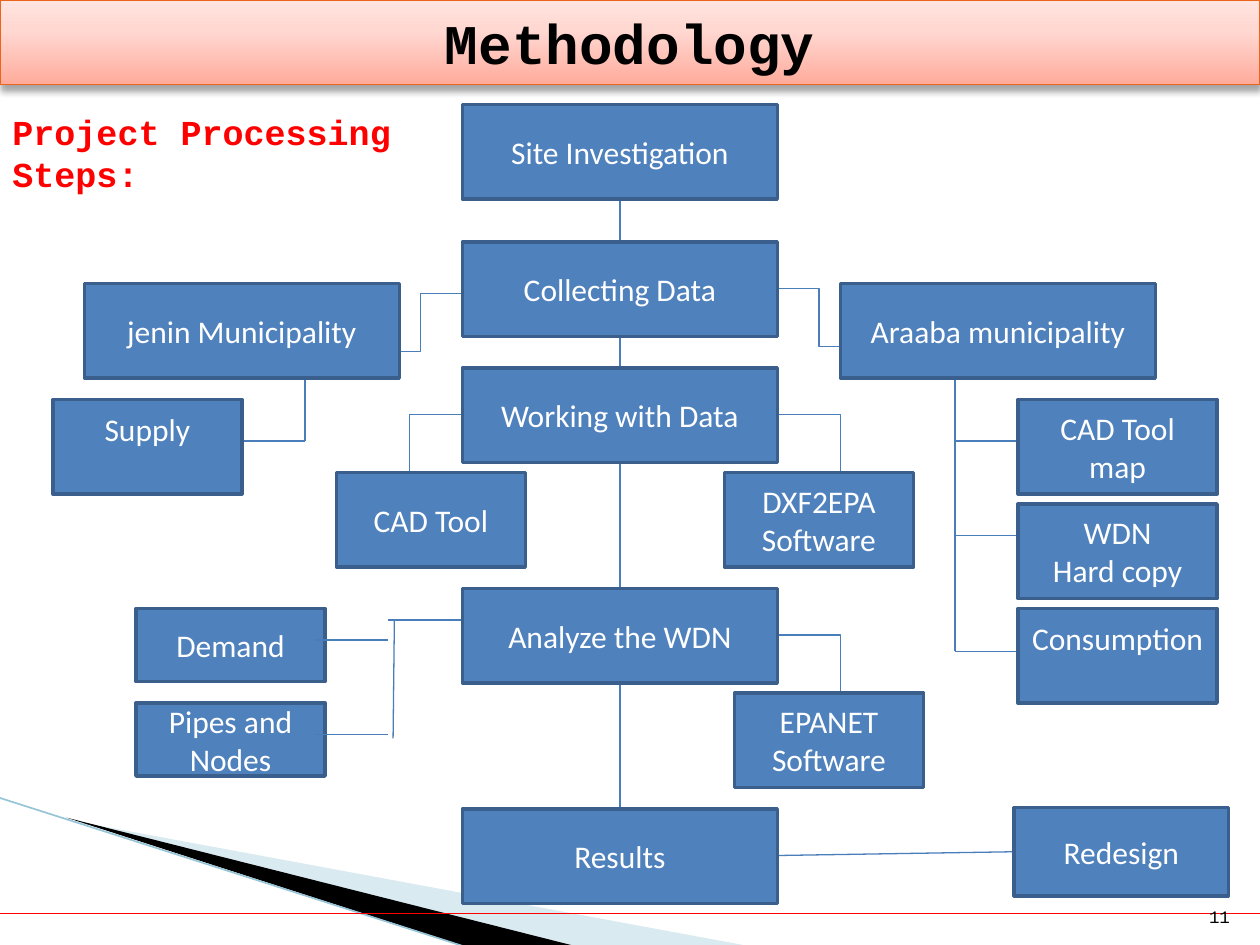
from typing import NamedTuple

from lxml.etree import SubElement
from pptx import Presentation
from pptx.dml.color import RGBColor
from pptx.enum.shapes import MSO_CONNECTOR, MSO_SHAPE
from pptx.enum.text import MSO_ANCHOR, PP_ALIGN
from pptx.oxml import parse_xml
from pptx.oxml.ns import nsdecls, qn
from pptx.util import Inches, Pt

BOX_FILL = RGBColor(0x4F, 0x81, 0xBD)
BOX_LINE = RGBColor(0x3A, 0x5F, 0x8C)
LINK_BLUE = RGBColor(0x4A, 0x7E, 0xBB)
EDGE_BLUE = RGBColor(0x97, 0xC5, 0xD8)
WEDGE_BLUE = RGBColor(0xA0, 0xCB, 0xDC)
TITLE_LINE = RGBColor(0xEB, 0x64, 0x1B)
RED = RGBColor(0xFF, 0x00, 0x00)
BLACK = RGBColor(0x00, 0x00, 0x00)
WHITE = RGBColor(0xFF, 0xFF, 0xFF)
TITLE_STOPS = ((0, "FFAC9C"), (65, "FFD8D2"), (100, "FFE4DF"))

MAIN_LEFT, MAIN_WIDTH, BOX_HEIGHT = 3.67, 2.5, 0.75
MAIN_CENTER, MAIN_RIGHT = MAIN_LEFT + MAIN_WIDTH / 2, MAIN_LEFT + MAIN_WIDTH
DATA_TRUNK = 7.58


class Box(NamedTuple):
    text: str
    left: float
    top: float
    width: float = 1.5
    height: float = BOX_HEIGHT
    at_top: bool = False


class Link(NamedTuple):
    start: tuple[float, float]
    end: tuple[float, float]
    preset: str = "line"


MAIN_STEPS = [
    Box(text, MAIN_LEFT, top, MAIN_WIDTH)
    for text, top in (
        ("Site Investigation", 0.83),
        ("Collecting Data", 1.92),
        ("Working with Data", 2.92),
        ("Analyze the WDN", 4.67),
        ("Results", 6.42),
    )
]
SIDE_BOXES = [
    Box("jenin Municipality", 0.67, 2.25, MAIN_WIDTH),
    Box("Araaba municipality", 6.67, 2.25, MAIN_WIDTH),
    Box("Supply", 0.42, 3.17, at_top=True),
    Box("CAD Tool map", 8.08, 3.17, 1.58),
    Box("WDN\nHard copy", 8.08, 4, 1.58),
    Box("Consumption", 8.08, 4.83, 1.58, at_top=True),
    Box("CAD Tool", 2.67, 3.75),
    Box("DXF2EPA\nSoftware", 5.75, 3.75),
    Box("EPANET\nSoftware", 5.83, 5.5),
    Box("Demand", 1.08, 4.83, height=0.58),
    Box("Pipes and Nodes", 1.08, 5.58, height=0.58),
    Box("Redesign", 8.05, 6.41, 1.7, 0.7),
]
STEP_LINKS = [
    Link((MAIN_CENTER, upper.top + BOX_HEIGHT), (MAIN_CENTER, lower.top))
    for upper, lower in zip(MAIN_STEPS, MAIN_STEPS[1:])
]
BRANCH_LINKS = [
    Link((MAIN_RIGHT, 2.29), (6.83, 2.75), "bentConnector3"),
    Link((3, 2.79), (MAIN_LEFT, 2.33), "bentConnector3"),
    Link((MAIN_LEFT, 3.29), (3.25, 4), "bentConnector2"),
    Link((MAIN_RIGHT, 3.29), (6.67, 4), "bentConnector2"),
    Link((MAIN_RIGHT, 5.04), (6.67, 5.75), "bentConnector2"),
    Link((2.42, 3), (2.42, 3.5)),
    Link((1.92, 3.5), (2.42, 3.5)),
    Link((DATA_TRUNK, 3), (DATA_TRUNK, 5.17)),
    *(Link((DATA_TRUNK, y), (8.08, y)) for y in (3.5, 4.25, 5.17)),
    Link((MAIN_LEFT, 4.92), (3.08, 4.92)),
    Link((3.13, 4.92), (3.12, 5.86)),
    Link((MAIN_RIGHT, 6.79), (8.05, 6.76)),
]
INPUT_LINKS = [Link((3.08, y), (2.5, y)) for y in (5.08, 5.83)]


def style_text(text_frame, size: float, font: str, color: RGBColor,
               alignment: PP_ALIGN, bold: bool = False) -> None:
    for paragraph in text_frame.paragraphs:
        paragraph.alignment = alignment
        for run in paragraph.runs:
            run.font.size = Pt(size)
            run.font.name = font
            run.font.bold = bold
            run.font.color.rgb = color


def add_link(slide, link: Link, color: RGBColor = LINK_BLUE, width: float = 0.75) -> None:
    kind = MSO_CONNECTOR.STRAIGHT if link.preset == "line" else MSO_CONNECTOR.ELBOW
    connector = slide.shapes.add_connector(
        kind, *(Inches(value) for value in link.start + link.end))
    properties = connector.element.spPr
    properties.find(qn("a:prstGeom")).set("prst", link.preset)
    connector.line.color.rgb = color
    connector.line.width = Pt(width)
    SubElement(properties, qn("a:effectLst"))


def add_box(slide, box: Box) -> None:
    shape = slide.shapes.add_shape(
        MSO_SHAPE.RECTANGLE, Inches(box.left), Inches(box.top),
        Inches(box.width), Inches(box.height))
    shape.shadow.inherit = False
    shape.fill.solid()
    shape.fill.fore_color.rgb = BOX_FILL
    shape.line.color.rgb = BOX_LINE
    shape.line.width = Pt(2)
    text_frame = shape.text_frame
    text_frame.text = box.text
    text_frame.word_wrap = True
    text_frame.vertical_anchor = MSO_ANCHOR.MIDDLE
    if box.at_top:
        text_frame.vertical_anchor = MSO_ANCHOR.TOP
        text_frame.margin_top = Inches(0.08)
    style_text(text_frame, 18, "Calibri", WHITE, PP_ALIGN.CENTER)


def add_wedge(slide, points: list[tuple[float, float]], color: RGBColor,
              opacity: int = 100) -> None:
    builder = slide.shapes.build_freeform(
        *(Inches(value) for value in points[0]))
    builder.add_line_segments([(Inches(x), Inches(y)) for x, y in points[1:]])
    shape = builder.convert_to_shape()
    shape.shadow.inherit = False
    shape.fill.solid()
    shape.fill.fore_color.rgb = color
    shape.line.fill.background()
    if opacity < 100:
        fill_color = shape.element.spPr.find(".//" + qn("a:srgbClr"))
        SubElement(fill_color, qn("a:alpha"), val=str(opacity * 1000))


def add_text(slide, text: str, left: float, top: float, width: float, height: float):
    text_box = slide.shapes.add_textbox(
        Inches(left), Inches(top), Inches(width), Inches(height))
    text_box.text_frame.word_wrap = True
    text_box.text_frame.text = text
    return text_box.text_frame


def format_title(title) -> None:
    title.left, title.top = Inches(0), Inches(0)
    title.width, title.height = Inches(10), Inches(0.67)
    title.text_frame.text = "Methodology"
    title.text_frame.vertical_anchor = MSO_ANCHOR.MIDDLE
    style_text(title.text_frame, 32, "Courier New", BLACK, PP_ALIGN.CENTER, bold=True)
    stops = "".join(
        f'<a:gs pos="{position * 1000}"><a:srgbClr val="{color}"/></a:gs>'
        for position, color in TITLE_STOPS)
    properties = title.element.spPr
    properties.append(parse_xml(
        f'<a:prstGeom {nsdecls("a")} prst="rect"><a:avLst/></a:prstGeom>'))
    properties.append(parse_xml(
        f'<a:gradFill {nsdecls("a")} rotWithShape="1"><a:gsLst>{stops}</a:gsLst>'
        '<a:lin ang="16200000" scaled="0"/></a:gradFill>'))
    title.line.color.rgb = TITLE_LINE
    title.line.width = Pt(0.75)
    properties.append(parse_xml(
        f'<a:effectLst {nsdecls("a")}><a:outerShdw blurRad="{Pt(4)}" dist="{Pt(3)}" '
        'dir="5400000" rotWithShape="0"><a:srgbClr val="000000">'
        '<a:alpha val="35000"/></a:srgbClr></a:outerShdw></a:effectLst>'))


def main() -> None:
    presentation = Presentation()
    presentation.slide_width, presentation.slide_height = Inches(10), Inches(7.5)
    slide = presentation.slides.add_slide(presentation.slide_layouts[5])
    format_title(slide.shapes.title)

    add_wedge(slide, [(0.55, 6.51), (5.95, 7.51), (4.56, 7.51)], WEDGE_BLUE, 40)
    add_wedge(slide, [(0.53, 6.49), (4.57, 7.51), (3.72, 7.52)], BLACK)
    add_link(slide, Link((-0.01, 6.33), (3.71, 7.52)), EDGE_BLUE, 0.95)
    add_link(slide, Link((0, 7.25), (10, 7.25)), RED)

    for link in STEP_LINKS + BRANCH_LINKS:
        add_link(slide, link)
    for box in MAIN_STEPS + SIDE_BOXES:
        add_box(slide, box)
    for link in INPUT_LINKS:
        add_link(slide, link)

    heading = add_text(slide, "Project Processing Steps:", 0, 0.83, 4.08, 0.44)
    style_text(heading, 20, "Courier New", RED, PP_ALIGN.LEFT, bold=True)
    number = add_text(slide, "11", 9.46, 7.01, 0.4, 0.4)
    number.vertical_anchor = MSO_ANCHOR.BOTTOM
    style_text(number, 10, "Courier New", BLACK, PP_ALIGN.RIGHT)
    presentation.save("out.pptx")


if __name__ == "__main__":
    main()
